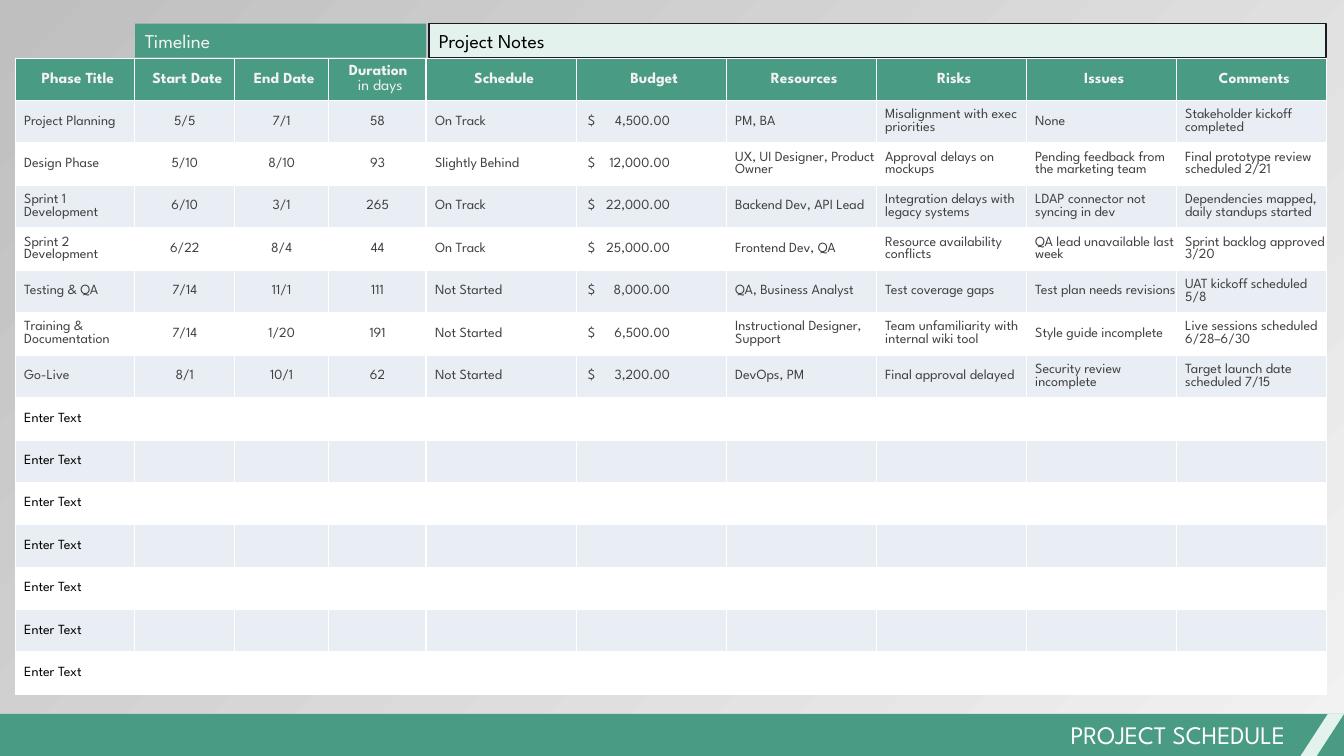
from lxml.etree import SubElement
from pptx import Presentation
from pptx.dml.color import RGBColor
from pptx.enum.shapes import MSO_SHAPE as Shape
from pptx.enum.text import MSO_ANCHOR as Anchor, PP_ALIGN as Align
from pptx.oxml.ns import qn
from pptx.util import Pt

FONT = "League Spartan"
GREEN, MINT, WHITE, BAND = "4A9B83", "E3F2ED", "FFFFFF", "E8EEF3"
PALE, GREY, BLACK, INK = "F2F2F2", "404040", "000000", "1B1A22"
SLIDE_WIDTH, SLIDE_HEIGHT = 960, 540

HEADERS = ["Phase Title", "Start Date", "End Date", "Duration", "Schedule",
           "Budget", "Resources", "Risks", "Issues", "Comments"]
COLUMN_WIDTHS = [85.2, 71.3, 67.1, 70] + [107.15] * 6
ROW_HEIGHT = 30.33
DURATION, BUDGET = HEADERS.index("Duration"), HEADERS.index("Budget")
PHASES = [
    ["Project Planning", "5/5", "7/1", "58", "On Track", "$\t4,500.00", "PM, BA",
     "Misalignment with exec priorities", "None", "Stakeholder kickoff completed"],
    ["Design Phase", "5/10", "8/10", "93", "Slightly Behind", "$\t12,000.00",
     "UX, UI Designer, Product Owner", "Approval delays on mockups",
     "Pending feedback from the marketing team", "Final prototype review scheduled 2/21"],
    ["Sprint 1 Development", "6/10", "3/1", "265", "On Track", "$\t22,000.00",
     "Backend Dev, API Lead", "Integration delays with legacy systems",
     "LDAP connector not syncing in dev", "Dependencies mapped, daily standups started"],
    ["Sprint 2 Development", "6/22", "8/4", "44", "On Track", "$\t25,000.00",
     "Frontend Dev, QA", "Resource availability conflicts",
     "QA lead unavailable last week", "Sprint backlog approved 3/20"],
    ["Testing & QA", "7/14", "11/1", "111", "Not Started", "$\t8,000.00",
     "QA, Business Analyst", "Test coverage gaps",
     "Test plan needs revisions", "UAT kickoff scheduled 5/8"],
    ["Training & Documentation", "7/14", "1/20", "191", "Not Started", "$\t6,500.00",
     "Instructional Designer, Support", "Team unfamiliarity with internal wiki tool",
     "Style guide incomplete", "Live sessions scheduled 6/28–6/30"],
    ["Go-Live", "8/1", "10/1", "62", "Not Started", "$\t3,200.00", "DevOps, PM",
     "Final approval delayed", "Security review incomplete",
     "Target launch date scheduled 7/15"],
]
BLANK_PHASES = [["Enter Text"] + [""] * 9] * 7


def color(value):
    return RGBColor.from_string(value)


def paint(target, value):
    target.fill.solid()
    target.fill.fore_color.rgb = color(value)


def style_text(paragraph, size, value, align=Align.LEFT, bold=False):
    paragraph.alignment = align
    font = paragraph.font
    font.name, font.size, font.bold = FONT, Pt(size), bold
    font.color.rgb = color(value)


def add_block(slide, kind, left, top, width, height, fill, line=None):
    shape = slide.shapes.add_shape(kind, Pt(left), Pt(top), Pt(width), Pt(height))
    shape.shadow.inherit = False
    paint(shape, fill)
    if line:
        shape.line.color.rgb = color(line)
        shape.line.width = Pt(1)
    else:
        shape.line.fill.background()
    return shape


def write_label(shape, text, size, value, align=Align.LEFT):
    frame = shape.text_frame
    frame.word_wrap = True
    frame.vertical_anchor = Anchor.BOTTOM
    frame.text = text
    style_text(frame.paragraphs[0], size, value, align)


def add_background(slide):
    fill = slide.background.fill
    fill.gradient()
    fill.gradient_angle = 135
    for stop, value in zip(fill.gradient_stops, (PALE, "BFBFBF")):
        stop.color.rgb = color(value)


def add_footer(slide, left, top, width, height):
    slash_width = 31
    add_block(slide, Shape.RECTANGLE, left, top, width, height, GREEN)
    slash = add_block(slide, Shape.PARALLELOGRAM, left + width - slash_width, top,
                      slash_width, height, MINT)
    slash.adjustments[0] = 0.65
    title = slide.shapes.add_textbox(Pt(left + 378), Pt(top), Pt(547), Pt(height - 1))
    write_label(title, "PROJECT SCHEDULE", 18, WHITE, Align.RIGHT)


def add_group_labels(slide, left, top, height):
    """Label the date columns and the note columns of the table below."""
    timeline_left = left + COLUMN_WIDTHS[0]
    notes_left = left + sum(COLUMN_WIDTHS[:4]) + 2
    notes_width = sum(COLUMN_WIDTHS[4:]) - 2
    timeline = add_block(slide, Shape.RECTANGLE, timeline_left + 0.5, top,
                         sum(COLUMN_WIDTHS[1:4]) - 0.5, height, GREEN)
    write_label(timeline, "Timeline", 14, PALE)
    notes = add_block(slide, Shape.RECTANGLE, notes_left, top, notes_width, height, MINT, INK)
    write_label(notes, "Project Notes", 14, BLACK)


def add_borders(cell):
    properties = cell._tc.get_or_add_tcPr()
    for side in ("a:lnL", "a:lnR", "a:lnT", "a:lnB"):
        line = SubElement(properties, qn(side), w=str(Pt(1)))
        SubElement(SubElement(line, qn("a:solidFill")), qn("a:srgbClr"), val=WHITE)


def format_cell(cell, fill, left_margin):
    add_borders(cell)
    paint(cell, fill)
    cell.vertical_anchor = Anchor.MIDDLE
    cell.margin_left = Pt(left_margin)
    cell.margin_right = cell.margin_top = cell.margin_bottom = 0


def add_right_tab(paragraph, position):
    tabs = paragraph._p.get_or_add_pPr()
    tab_list = tabs.makeelement(qn("a:tabLst"))
    SubElement(tab_list, qn("a:tab"), pos=str(Pt(position)), algn="r")
    tabs.insert(0, tab_list)


def fill_header(cell, column):
    format_cell(cell, GREEN, 4.5)
    paragraph = cell.text_frame.paragraphs[0]
    style_text(paragraph, 11, PALE, Align.CENTER, bold=True)
    if column == DURATION:
        paragraph.add_run().text = HEADERS[column] + " "
        paragraph.add_line_break()
        unit = paragraph.add_run()
        unit.text = "in days"
        unit.font.bold = False
    else:
        paragraph.add_run().text = HEADERS[column]


def fill_entry(cell, column, text, fill, value):
    centered = 1 <= column <= DURATION
    format_cell(cell, fill, 0.7 if centered else 8.5 if column == BUDGET else 6.5)
    cell.text = text
    paragraph = cell.text_frame.paragraphs[0]
    style_text(paragraph, 10, value, Align.CENTER if centered else Align.LEFT)
    if column == BUDGET and text:
        add_right_tab(paragraph, 58.5)


def add_schedule(slide, left, top):
    entries = PHASES + BLANK_PHASES
    row_count = len(entries) + 1
    table = slide.shapes.add_table(row_count, len(HEADERS), Pt(left), Pt(top),
                                   Pt(sum(COLUMN_WIDTHS)), Pt(ROW_HEIGHT * row_count)).table
    table.first_row = table.horz_banding = False
    for column, width in zip(table.columns, COLUMN_WIDTHS):
        column.width = Pt(width)
    for row in table.rows:
        row.height = Pt(ROW_HEIGHT)
    for column in range(len(HEADERS)):
        fill_header(table.cell(0, column), column)
    for row, entry in enumerate(entries, 1):
        fill = BAND if row % 2 else WHITE
        value = GREY if row <= len(PHASES) else BLACK
        for column, text in enumerate(entry):
            fill_entry(table.cell(row, column), column, text, fill, value)


def main():
    presentation = Presentation()
    presentation.slide_width, presentation.slide_height = Pt(SLIDE_WIDTH), Pt(SLIDE_HEIGHT)
    slide = presentation.slides.add_slide(presentation.slide_layouts[6])
    add_background(slide)
    add_footer(slide, 0, 510, SLIDE_WIDTH, 30)
    add_schedule(slide, 10.8, 41.5)
    add_group_labels(slide, 10.8, 16.8, 24.4)
    presentation.save("out.pptx")


if __name__ == "__main__":
    main()
